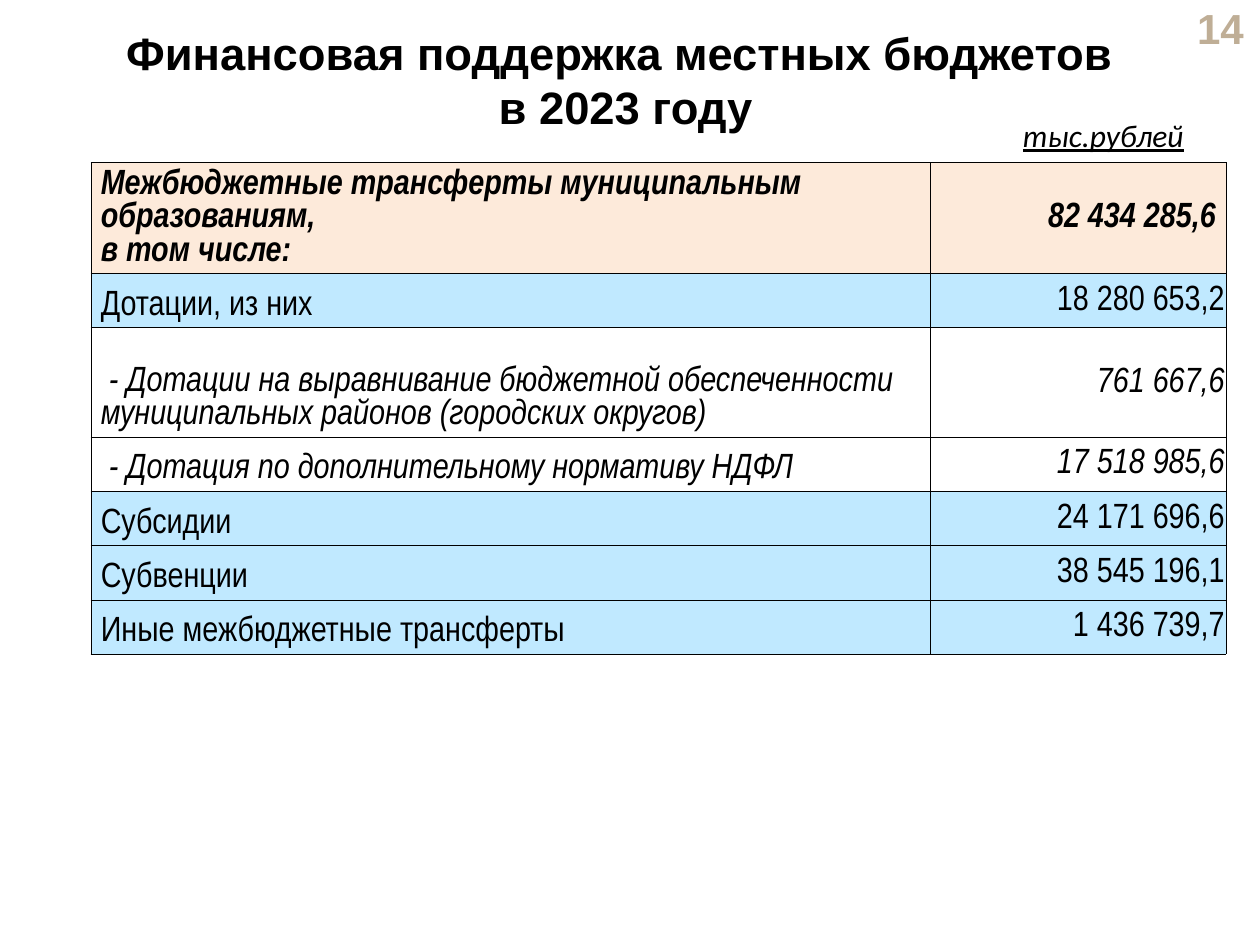
from lxml import etree
from pptx import Presentation
from pptx.dml.color import RGBColor
from pptx.enum.text import MSO_ANCHOR, PP_ALIGN
from pptx.oxml.ns import qn
from pptx.util import Inches, Pt

BLACK = RGBColor(0x00, 0x00, 0x00)
SAND = RGBColor(0xBF, 0xAE, 0x96)
PEACH = RGBColor(0xFD, 0xEA, 0xDA)
SKY = RGBColor(0xC0, 0xE9, 0xFF)
LEFT, CENTER, RIGHT = PP_ALIGN.LEFT, PP_ALIGN.CENTER, PP_ALIGN.RIGHT
TOP, MIDDLE, BOTTOM = MSO_ANCHOR.TOP, MSO_ANCHOR.MIDDLE, MSO_ANCHOR.BOTTOM


def write(frame, text, font, size, color=BLACK, align=LEFT, bold=False, italic=False):
    """Fill a text frame and format all its runs alike."""
    frame.text = text
    for para in frame.paragraphs:
        para.alignment = align
        for span in para.runs:
            span.font.name = font
            span.font.size = Pt(size)
            span.font.color.rgb = color
            span.font.bold = bold
            span.font.italic = italic


def add_borders(cell):
    """Draw a thin black line on each side of a cell."""
    props = cell._tc.get_or_add_tcPr()
    for index, side in enumerate(("a:lnL", "a:lnR", "a:lnT", "a:lnB")):
        line = etree.Element(qn(side), w=str(Pt(0.25)))
        fill = etree.SubElement(line, qn("a:solidFill"))
        etree.SubElement(fill, qn("a:srgbClr"), val=str(BLACK))
        props.insert(index, line)


deck = Presentation()
deck.slide_width, deck.slide_height = Inches(10), Inches(7.5)
page = deck.slides.add_slide(deck.slide_layouts[6])

# Page number
box = page.shapes.add_textbox(Inches(9.11), Inches(0.05), Inches(0.86), Inches(0.34))
box.text_frame.word_wrap = True
box.text_frame.vertical_anchor = MIDDLE
write(box.text_frame, "14", "Arial", 24, SAND, RIGHT, bold=True)

# Title
box = page.shapes.add_textbox(Inches(0.54), Inches(0.15), Inches(8.85), Inches(0.82))
box.text_frame.word_wrap = True
box.text_frame.vertical_anchor = TOP
write(box.text_frame, "Финансовая поддержка местных бюджетов \vв 2023 году",
      "Arial", 25.9, align=CENTER, bold=True)

# Transfers table: label, amount, row height, fill, bold, italic
ROWS = [
    ("Межбюджетные трансферты муниципальным образованиям,\nв том числе:",
     "82 434 285,6", 0.88, PEACH, True, True),
    ("Дотации, из них", "18 280 653,2", 0.43, SKY, False, False),
    (" - Дотации на выравнивание бюджетной обеспеченности "
     "муниципальных районов (городских округов)",
     "761 667,6", 0.87, None, False, True),
    (" - Дотация по дополнительному нормативу НДФЛ",
     "17 518 985,6", 0.43, None, False, True),
    ("Субсидии", "24 171 696,6", 0.43, SKY, False, False),
    ("Субвенции", "38 545 196,1", 0.43, SKY, False, False),
    ("Иные межбюджетные трансферты", "1 436 739,7", 0.43, SKY, False, False),
]
WIDE_MARGINS = (0.08, 0.04, 0.08, 0.04)
TIGHT_MARGINS = (0.01, 0.01, 0.01, 0)

height = sum(row[2] for row in ROWS)
table = page.shapes.add_table(len(ROWS), 2, Inches(0.72), Inches(1.29),
                              Inches(9.01), Inches(height)).table
table.first_row = table.horz_banding = False
table.columns[0].width = Inches(6.66)
table.columns[1].width = Inches(2.35)

for r, (label, amount, row_height, color, bold, italic) in enumerate(ROWS):
    table.rows[r].height = Inches(row_height)
    amount_margins = WIDE_MARGINS if r == 0 else TIGHT_MARGINS
    columns = ((label, LEFT, BOTTOM, WIDE_MARGINS), (amount, RIGHT, MIDDLE, amount_margins))
    for c, (text, align, anchor, margins) in enumerate(columns):
        cell = table.cell(r, c)
        write(cell.text_frame, text, "Arial Narrow", 20, align=align, bold=bold, italic=italic)
        cell.vertical_anchor = anchor
        (cell.margin_left, cell.margin_top,
         cell.margin_right, cell.margin_bottom) = map(Inches, margins)
        if color is None:
            cell.fill.background()
        else:
            cell.fill.solid()
            cell.fill.fore_color.rgb = color
        add_borders(cell)

# Fixed line pitch keeps the three heading lines within their row
for para in table.cell(0, 0).text_frame.paragraphs:
    para.line_spacing = Pt(19)

# Unit of measure
box = page.shapes.add_textbox(Inches(8.02), Inches(0.87), Inches(1.49), Inches(0.4))
box.text_frame.word_wrap = False
write(box.text_frame, "тыс.рублей", "Calibri", 18, italic=True)
box.text_frame.paragraphs[0].runs[0].font.underline = True

deck.save("out.pptx")
